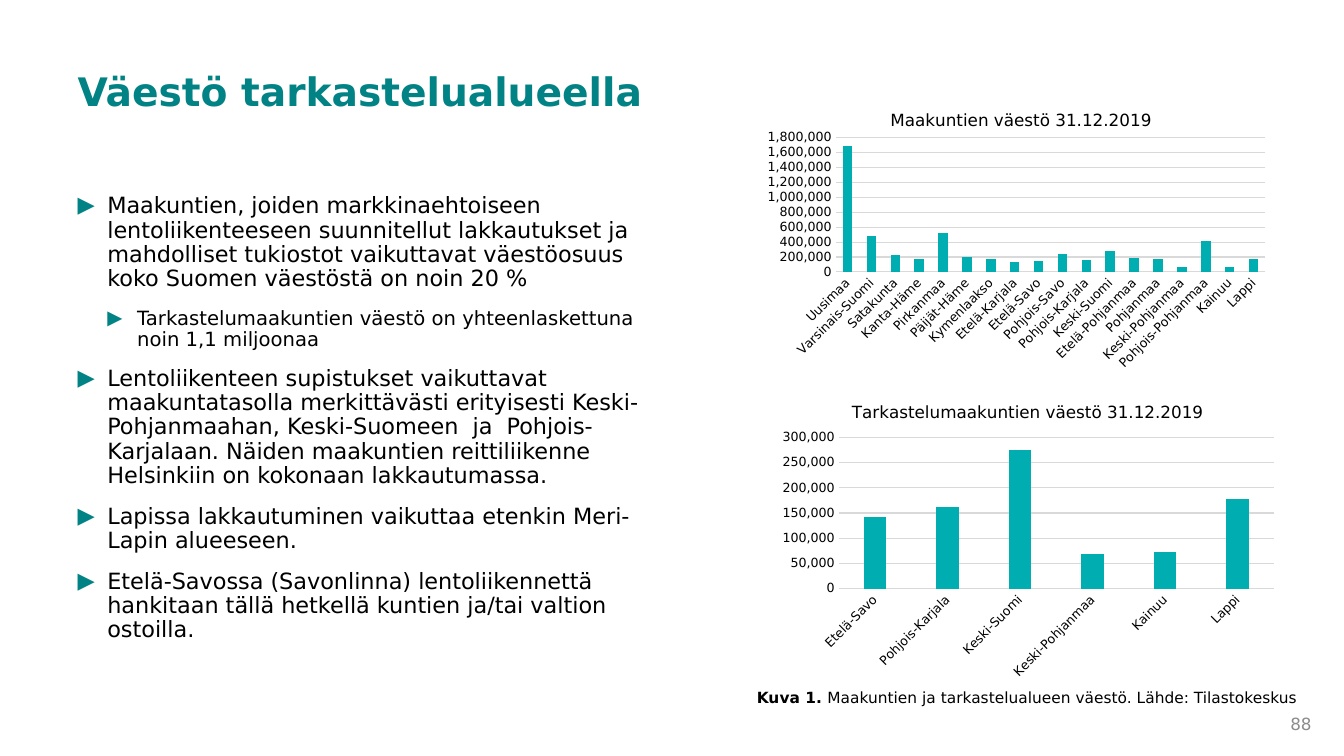
from lxml import etree
from pptx import Presentation
from pptx.chart.data import CategoryChartData
from pptx.dml.color import RGBColor
from pptx.enum.chart import XL_CHART_TYPE, XL_TICK_MARK
from pptx.enum.text import MSO_ANCHOR, MSO_AUTO_SIZE, PP_ALIGN
from pptx.oxml import parse_xml
from pptx.oxml.ns import nsdecls, qn
from pptx.util import Pt

STACKED = XL_CHART_TYPE.COLUMN_STACKED
GROUPED = XL_CHART_TYPE.COLUMN_CLUSTERED
NO_TICK = XL_TICK_MARK.NONE
NO_FIT = MSO_AUTO_SIZE.NONE
TOP, MIDDLE = MSO_ANCHOR.TOP, MSO_ANCHOR.MIDDLE
LEFT, RIGHT = PP_ALIGN.LEFT, PP_ALIGN.RIGHT

FONT = "DejaVu Sans"
TEAL, BAR, GRID, GREY, BLACK = "018285", "00AEB2", "D9D9D9", "8C8C8C", "000000"

POINTS = [
    (0, "Maakuntien, joiden markkinaehtoiseen lentoliikenteeseen suunnitellut "
        "lakkautukset ja mahdolliset tukiostot vaikuttavat väestöosuus koko "
        "Suomen väestöstä on noin 20 %"),
    (1, "Tarkastelumaakuntien väestö on yhteenlaskettuna noin 1,1 miljoonaa"),
    (0, "Lentoliikenteen supistukset vaikuttavat maakuntatasolla merkittävästi "
        "erityisesti Keski-Pohjanmaahan, Keski-Suomeen  ja  Pohjois-Karjalaan. "
        "Näiden maakuntien reittiliikenne Helsinkiin on kokonaan lakkautumassa."),
    (0, "Lapissa lakkautuminen vaikuttaa etenkin Meri-Lapin alueeseen."),
    (0, "Etelä-Savossa (Savonlinna) lentoliikennettä hankitaan tällä hetkellä "
        "kuntien ja/tai valtion ostoilla."),
]
ALL = {
    "Uusimaa": 1690000, "Varsinais-Suomi": 480000, "Satakunta": 220000,
    "Kanta-Häme": 170000, "Pirkanmaa": 520000, "Päijät-Häme": 200000,
    "Kymenlaakso": 170000, "Etelä-Karjala": 130000, "Etelä-Savo": 140000,
    "Pohjois-Savo": 240000, "Pohjois-Karjala": 160000, "Keski-Suomi": 280000,
    "Etelä-Pohjanmaa": 190000, "Pohjanmaa": 180000, "Keski-Pohjanmaa": 70000,
    "Pohjois-Pohjanmaa": 410000, "Kainuu": 70000, "Lappi": 180000,
}
FOCUS = {
    "Etelä-Savo": 142000, "Pohjois-Karjala": 161000, "Keski-Suomi": 275000,
    "Keski-Pohjanmaa": 68000, "Kainuu": 72000, "Lappi": 177000,
}


def rgb(code):
    return RGBColor.from_string(code)


def style(font, size, color=BLACK, bold=False):
    font.name, font.size, font.bold = FONT, Pt(size), bold
    font.color.rgb = rgb(color)


def add_run(para, text, size, color=BLACK, bold=False):
    run = para.add_run()
    run.text = text
    style(run.font, size, color, bold)


def move(shape, box):
    shape.left, shape.top, shape.width, shape.height = map(Pt, box)


def frame_of(shape, anchor=TOP):
    frame = shape.text_frame
    frame.word_wrap = True
    frame.auto_size = NO_FIT
    frame.vertical_anchor = anchor
    return frame


def add_text(slide, box, runs, align=LEFT, anchor=TOP):
    shape = slide.shapes.add_textbox(*map(Pt, box))
    para = frame_of(shape, anchor).paragraphs[0]
    para.alignment = align
    for run in runs:
        add_run(para, *run)


def add_title(slide, box, text):
    move(slide.shapes.title, box)
    para = frame_of(slide.shapes.title).paragraphs[0]
    para.alignment = LEFT
    para.line_spacing = 0.9
    add_run(para, text, 28, TEAL, True)


def add_mark(para, level):
    props = para._p.get_or_add_pPr()
    props.set("marL", str(Pt(21.3 * (level + 1))))
    props.set("indent", str(-Pt(21.3)))
    color = etree.SubElement(props, qn("a:buClr"))
    etree.SubElement(color, qn("a:srgbClr"), val=TEAL)
    etree.SubElement(props, qn("a:buFont"), typeface=FONT)
    etree.SubElement(props, qn("a:buChar"), char="▶")


def add_list(slide, box, points):
    body = slide.placeholders[1]
    move(body, box)
    frame = frame_of(body)
    for i, (level, text) in enumerate(points):
        para = frame.add_paragraph() if i else frame.paragraphs[0]
        add_mark(para, level)
        para.level = level
        para.line_spacing = 0.9
        para.space_before = Pt(12 if i else 0)
        add_run(para, text, 14 if level else 16)


def set_place(part, index, inner=False, **sides):
    """Fix the place of a chart part, in shares of the chart."""
    for old in part.findall(qn("c:layout")):
        part.remove(old)
    rows = '<c:layoutTarget val="inner"/>' if inner else ""
    rows += '<c:xMode val="edge"/><c:yMode val="edge"/>'
    rows += "".join(f'<c:{side} val="{val}"/>' for side, val in sides.items())
    part.insert(index, parse_xml(
        f'<c:layout {nsdecls("c")}><c:manualLayout>{rows}'
        '</c:manualLayout></c:layout>'))


def add_bars(slide, box, kind, title, shares, gap, lap, top, step, spot, plot):
    data = CategoryChartData(number_format="#,##0")
    data.categories = list(shares)
    data.add_series("Series 1", list(shares.values()))
    chart = slide.shapes.add_chart(kind, *map(Pt, box), data).chart
    style(chart.font, 10)
    chart.has_legend = False

    # Heading and plot area
    chart.has_title = True
    add_run(chart.chart_title.text_frame.paragraphs[0], title, 12)
    set_place(chart.chart_title._element, 1, x=spot[0], y=spot[1])
    area = chart._chartSpace.chart.plotArea
    set_place(area, 0, True, **dict(zip("xywh", plot)))

    # Bars
    bars = chart.plots[0]
    bars.gap_width, bars.overlap, bars.vary_by_categories = gap, lap, False
    fill = bars.series[0].format.fill
    fill.solid()
    fill.fore_color.rgb = rgb(BAR)

    # Axes
    names, scale = chart.category_axis, chart.value_axis
    for axis in (names, scale):
        axis.major_tick_mark = axis.minor_tick_mark = NO_TICK
        style(axis.tick_labels.font, 9)
    names.tick_labels.font._element.getparent().getparent().getparent().find(
        qn("a:bodyPr")).set("rot", "-2700000")
    scale.minimum_scale, scale.maximum_scale, scale.major_unit = 0, top, step
    scale.tick_labels.number_format = "#,##0"
    scale.tick_labels.number_format_is_linked = False
    scale.format.line.fill.background()
    for line in (names.format.line, scale.major_gridlines.format.line):
        line.color.rgb = rgb(GRID)
        line.width = Pt(0.75)


def main():
    deck = Presentation()
    deck.slide_width, deck.slide_height = Pt(960), Pt(540)
    slide = deck.slides.add_slide(deck.slide_layouts[1])

    # Title and list
    add_title(slide, (48.2, 48.2, 846, 87.1), "Väestö tarkastelualueella")
    add_list(slide, (48.2, 135.4, 431.3, 351.4), POINTS)

    # Charts
    add_bars(slide, (551.5, 273.6, 365.8, 216), GROUPED,
             "Tarkastelumaakuntien väestö 31.12.2019", FOCUS, 219, -27,
             300000, 50000, (0.15, 0.05), (0.13, 0.18, 0.85, 0.5))
    add_bars(slide, (541.4, 65.5, 370, 204.5), STACKED,
             "Maakuntien väestö 31.12.2019", ALL, 150, 100,
             1800000, 200000, (0.25, 0.05), (0.15, 0.16, 0.83, 0.47))

    # Caption and page number
    add_text(slide, (533.5, 488.2, 416.2, 20.9), [
        ("Kuva 1. ", 11, BLACK, True),
        ("Maakuntien ja tarkastelualueen väestö. Lähde: Tilastokeskus", 11)])
    add_text(slide, (890, 507, 54, 20), [("88", 12, GREY)], RIGHT, MIDDLE)

    deck.save("out.pptx")


if __name__ == "__main__":
    main()
